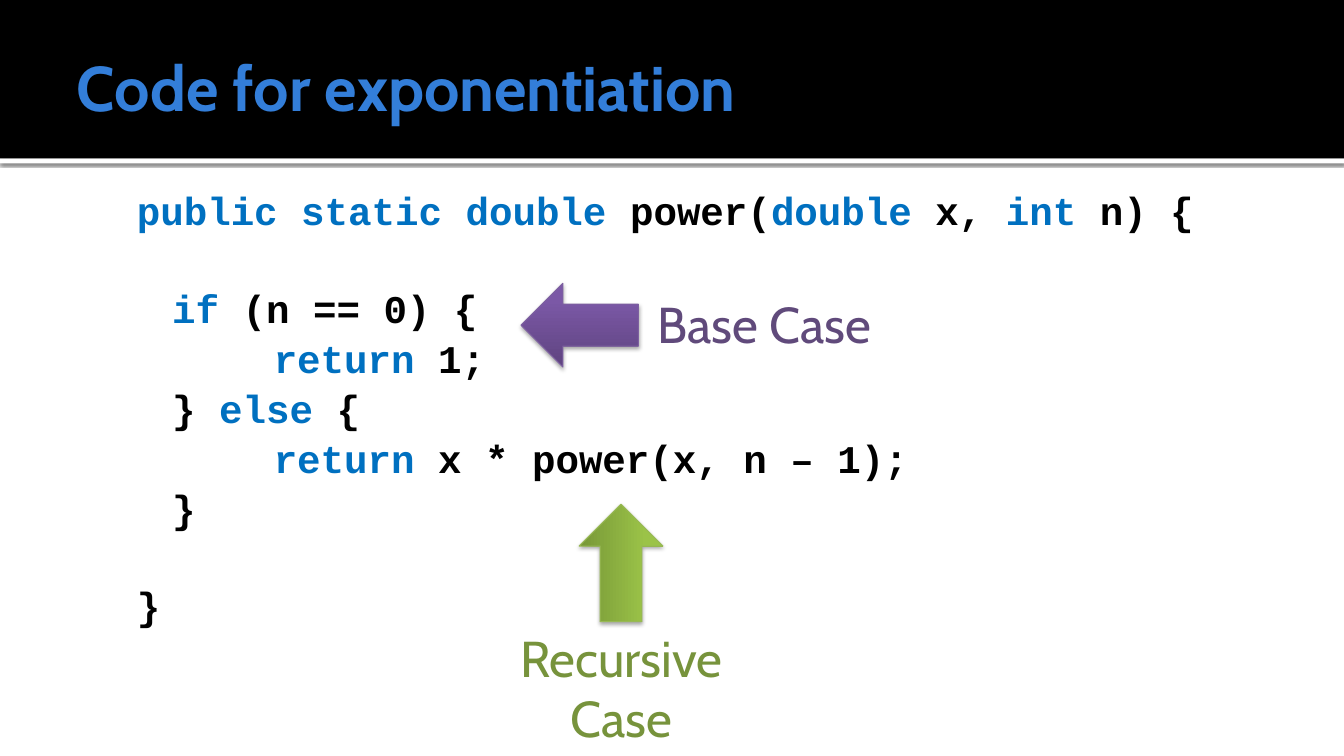
from dataclasses import dataclass
from itertools import cycle

from lxml import etree
from pptx import Presentation
from pptx import util as u
from pptx.dml.color import RGBColor
from pptx.enum import shapes, text
from pptx.oxml import ns

BLACK = RGBColor(0x00, 0x00, 0x00)
WHITE = RGBColor(0xFF, 0xFF, 0xFF)
TITLE = RGBColor(0x33, 0x7E, 0xD9)
BLUE = RGBColor(0x00, 0x70, 0xC0)
Box = tuple[float, float, float, float]  # left, top, width, height in cm


@dataclass
class Line:
    indent: float  # cm
    before: float  # points
    words: tuple[str, ...]  # keyword, plain, keyword, ...


@dataclass
class Case:
    label: str
    area: Box
    color: RGBColor
    arrow: Box
    turn: int
    dark: RGBColor
    light: RGBColor
    edge: RGBColor


STEPS = (0.33, 1.22, 3.78)
TIGHT, GAP = 2.1, 36
CODE = [
    Line(STEPS[0], TIGHT, ("public static double", " power(", "double", " x, ", "int", " n) {")),
    Line(STEPS[1], GAP, ("if ", "(n == 0) {")),
    Line(STEPS[2], TIGHT, ("return", " 1;")),
    Line(STEPS[1], TIGHT, ("", "} ", "else ", "{")),
    Line(STEPS[2], TIGHT, ("return", " x * power(x, n – 1);")),
    Line(STEPS[1], TIGHT, ("", "}")),
    Line(STEPS[0], GAP, ("", "}")),
]
CASES = [
    Case("Base Case", (15.67, 7.26, 7.19, 1.8), RGBColor(0x60, 0x4A, 0x7B),
         (13.13, 7.14, 2.96, 2.11), 0, RGBColor(0x5F, 0x44, 0x80),
         RGBColor(0x7B, 0x58, 0xA6), RGBColor(0x7D, 0x60, 0xA0)),
    Case("Recursive\nCase", (11, 15.67, 9.32, 3.33), RGBColor(0x77, 0x93, 0x3C),
         (14.17, 13.13, 2.96, 2.11), 90, RGBColor(0x77, 0x97, 0x37),
         RGBColor(0x9B, 0xC3, 0x48), RGBColor(0x98, 0xB9, 0x55)),
]


def place(box: Box) -> list[u.Cm]:
    return [u.Cm(side) for side in box]


def style(run, font: str, size: float, color: RGBColor, bold: bool = False) -> None:
    run.font.name = font
    run.font.size = u.Pt(size)
    run.font.bold = bold
    run.font.color.rgb = color


def shade(shape, blur: float, drop: float, alpha: int) -> None:
    """Put a soft black shadow below the shape."""
    shape.shadow.inherit = False
    effects = shape.element.spPr.find(ns.qn("a:effectLst"))
    outer = etree.SubElement(effects, ns.qn("a:outerShdw"), blurRad=str(u.Pt(blur)),
                             dist=str(u.Pt(drop)), dir="5400000", rotWithShape="0")
    color = etree.SubElement(outer, ns.qn("a:srgbClr"), val=str(BLACK))
    etree.SubElement(color, ns.qn("a:alpha"), val=str(alpha * 1000))


def add_bar(slide, box: Box, color: RGBColor):
    bar = slide.shapes.add_shape(shapes.MSO_SHAPE.RECTANGLE, *place(box))
    bar.shadow.inherit = False
    bar.fill.solid()
    bar.fill.fore_color.rgb = color
    bar.line.fill.background()
    return bar


def add_frame(slide, box: Box):
    frame = slide.shapes.add_textbox(*place(box)).text_frame
    frame.word_wrap = True
    return frame


def add_title(slide, words: str) -> None:
    frame = add_frame(slide, (1.69, 0.43, 30.48, 3.48))
    frame.vertical_anchor = text.MSO_ANCHOR.MIDDLE
    frame.text = words
    style(frame.paragraphs[0].runs[0], "Cabin", 45, TITLE, True)


def add_code(slide, lines: list[Line]) -> None:
    frame = add_frame(slide, (2.97, 4.45, 27.74, 13.34))
    frame.margin_left = u.Cm(0.15)
    frame.margin_top = u.Cm(0.25)
    for row, line in enumerate(lines):
        para = frame.add_paragraph() if row else frame.paragraphs[0]
        para.space_before = u.Pt(line.before)
        para._p.get_or_add_pPr().set("marL", str(u.Cm(line.indent)))
        for word, color in zip(line.words, cycle((BLUE, BLACK))):
            if word:
                run = para.add_run()
                run.text = word
                style(run, "Courier New", 28, color, True)


def add_case(slide, case: Case) -> None:
    arrow = slide.shapes.add_shape(shapes.MSO_SHAPE.LEFT_ARROW, *place(case.arrow))
    arrow.rotation = case.turn
    arrow.fill.gradient()
    arrow.fill.gradient_angle = 90
    stops = arrow.fill.gradient_stops
    for stop, color, pos in zip(stops, (case.dark, case.light), (0, 0.8)):
        stop.color.rgb = color
        stop.position = pos
    arrow.line.color.rgb = case.edge
    arrow.line.width = u.Pt(0.75)
    shade(arrow, 3.1, 1.8, 35)

    frame = add_frame(slide, case.area)
    frame.text = case.label
    for para in frame.paragraphs:
        para.alignment = text.PP_ALIGN.CENTER
        style(para.runs[0], "Cabin", 36, case.color)


def main() -> None:
    deck = Presentation()
    deck.slide_width, deck.slide_height = u.Cm(33.87), u.Cm(19.05)
    slide = deck.slides.add_slide(deck.slide_layouts[6])

    # Header band with its white rule
    shade(add_bar(slide, (0, 3.99, 33.87, 0.13), WHITE), 2.5, 0.8, 60)
    add_bar(slide, (0, 0, 33.87, 3.99), BLACK)
    add_title(slide, "Code for exponentiation")

    # Code and the two labelled cases
    add_code(slide, CODE)
    for case in CASES:
        add_case(slide, case)

    deck.save("out.pptx")


if __name__ == "__main__":
    main()
